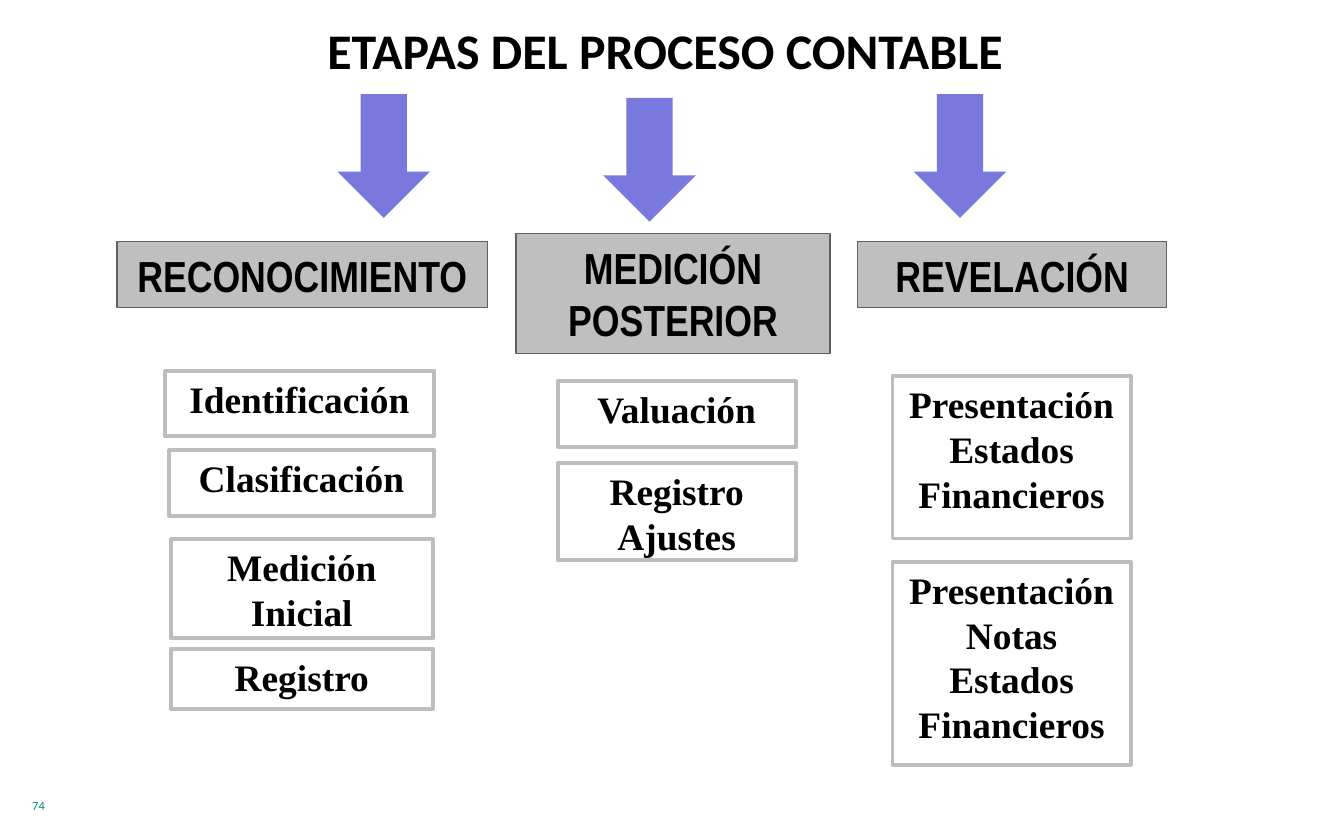
from pptx import Presentation
from pptx.dml.color import RGBColor
from pptx.enum.shapes import MSO_SHAPE
from pptx.enum.text import MSO_ANCHOR, MSO_AUTO_SIZE, PP_ALIGN
from pptx.util import Cm, Pt

COLORS = {
    "text": "000000",
    "number": "00918E",
    "arrow": "7878DE",
    "stage_fill": "BFBFBF",
    "stage_line": "606060",
    "step_fill": "FFFFFF",
    "step_line": "BDBDBD",
}

ARROWS = [(11.4, 1.85), (6.38, 1.78), (17.27, 1.78)]

STAGES = [
    ("RECONOCIMIENTO", 2.21, 4.57, 7.01, 1.24),
    ("MEDICIÓN POSTERIOR", 9.75, 4.42, 5.94, 2.26),
    ("REVELACIÓN", 16.21, 4.57, 5.84, 1.24),
]

STEPS = [
    ("Identificación", 3.12, 7.01, 5.08, 1.24),
    ("Clasificación", 3.2, 8.51, 5, 1.24),
    ("Medición Inicial", 3.23, 10.19, 4.95, 1.88),
    ("Registro", 3.23, 12.27, 4.95, 1.14),
    ("Valuación", 10.54, 7.21, 4.5, 1.24),
    ("Registro Ajustes", 10.54, 8.76, 4.5, 1.83),
    ("Presentación Estados Financieros", 16.87, 7.11, 4.5, 3.07),
    ("Presentación Notas Estados Financieros", 16.87, 10.62, 4.5, 3.84),
]


def color(name):
    return RGBColor.from_string(COLORS[name])


def write(box, text, font, size, ink="text", bold=True,
          align=PP_ALIGN.CENTER, insets=(0.2, 0.1)):
    frame = box.text_frame
    frame.word_wrap = True
    frame.auto_size = MSO_AUTO_SIZE.NONE
    frame.vertical_anchor = MSO_ANCHOR.TOP
    frame.margin_left = frame.margin_right = Cm(insets[0])
    frame.margin_top = frame.margin_bottom = Cm(insets[1])
    para = frame.paragraphs[0]
    para.alignment = align
    span = para.add_run()
    span.text = text
    span.font.name = font
    span.font.size = Pt(size)
    span.font.bold = bold
    span.font.color.rgb = color(ink)


def add_title(page, text):
    title = page.shapes.title
    title.left, title.top = Cm(2.46), Cm(0.28)
    title.width, title.height = Cm(20.24), Cm(2.59)
    write(title, text, "Calibri", 26.7)


def add_page_number(page, text):
    box = page.shapes.add_textbox(Cm(0.36), Cm(14.96), Cm(5.28), Cm(0.76))
    write(box, text, "Calibri", 6.7, "number", False, PP_ALIGN.LEFT, (0.25, 0.13))


def add_filled(page, kind, bounds, fill):
    shape = page.shapes.add_shape(kind, *(Cm(length) for length in bounds))
    shape.shadow.inherit = False
    shape.fill.solid()
    shape.fill.fore_color.rgb = color(fill)
    return shape


def add_box(page, bounds, role, line_width):
    box = add_filled(page, MSO_SHAPE.RECTANGLE, bounds, f"{role}_fill")
    box.line.color.rgb = color(f"{role}_line")
    box.line.width = Pt(line_width)
    return box


def add_stage(page, text, *bounds):
    box = add_box(page, bounds, "stage", 0.75)
    write(box, text, "Arial Narrow", 23.3, insets=(0.25, 0.13))


def add_step(page, text, *bounds):
    box = add_box(page, bounds, "step", 2)
    write(box, text, "Times New Roman", 20)


def add_arrow(page, left, top):
    arrow = add_filled(page, MSO_SHAPE.DOWN_ARROW, (left, top, 1.75, 2.34), "arrow")
    arrow.line.fill.background()


def main():
    deck = Presentation()
    deck.slide_width, deck.slide_height = Cm(25.4), Cm(15.88)
    page = deck.slides.add_slide(deck.slide_layouts[5])
    add_page_number(page, "74")
    add_title(page, "ETAPAS DEL PROCESO CONTABLE")
    for stage in STAGES:
        add_stage(page, *stage)
    for step in STEPS:
        add_step(page, *step)
    for arrow in ARROWS:
        add_arrow(page, *arrow)
    deck.save("out.pptx")


if __name__ == "__main__":
    main()
